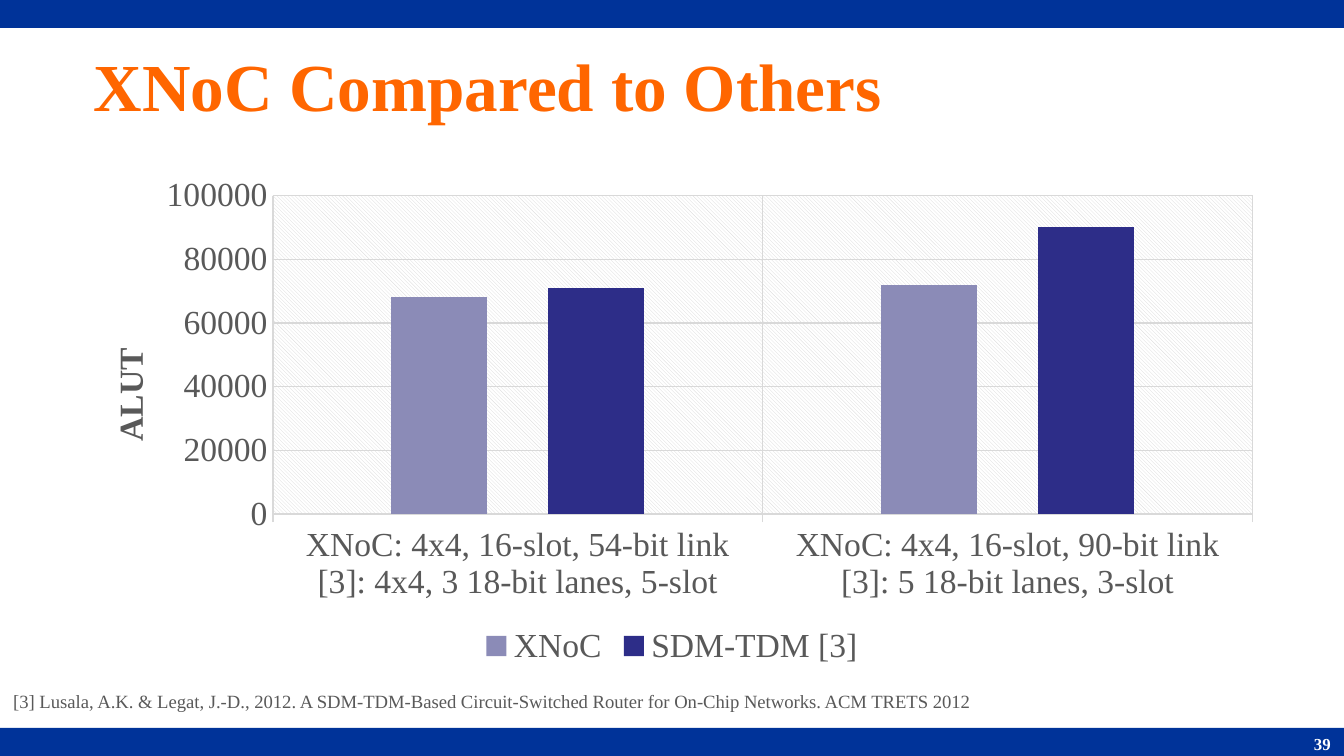
"""Build the slide that compares the ALUT use of XNoC and SDM-TDM."""
from lxml.etree import SubElement
from pptx import Presentation
from pptx.chart.data import CategoryChartData
from pptx.dml.color import RGBColor
from pptx.enum.chart import XL_CHART_TYPE, XL_LEGEND_POSITION, XL_TICK_MARK
from pptx.enum.shapes import MSO_SHAPE
from pptx.enum.text import MSO_ANCHOR, PP_ALIGN
from pptx.oxml import parse_xml
from pptx.oxml.ns import nsdecls, qn
from pptx.util import Pt

WIDTH, HEIGHT, BAND = 720, 405, 15
FONT = "Times New Roman"
BLUE, ORANGE, WHITE, GRAY, GRID = "003399", "FF6600", "FFFFFF", "595959", "D9D9D9"

TEXTS = [
    ("XNoC Compared to Others", (43, 15, 514, 61), 36, ORANGE, True, PP_ALIGN.LEFT),
    ("39", (570, 391.5, 150, 14), 9, WHITE, True, PP_ALIGN.RIGHT),
    ("[3] Lusala, A.K. & Legat, J.-D., 2012. A SDM-TDM-Based Circuit-Switched Router "
     "for On-Chip Networks. ACM TRETS 2012", (0, 366, 720, 19), 10, GRAY, False, PP_ALIGN.LEFT),
]
CATEGORIES = [
    "XNoC: 4x4, 16-slot, 54-bit link\n[3]: 4x4, 3 18-bit lanes, 5-slot",
    "XNoC: 4x4, 16-slot, 90-bit link\n[3]: 5 18-bit lanes, 3-slot",
]
SERIES = [
    ("XNoC", (68000, 72000), "8B8BB7"),
    ("SDM-TDM [3]", (71000, 90000), "2D2D88"),
]
CHART_BOX = (36, 88.5, 648, 271)
PLOT_LAYOUT = {"layoutTarget": "inner", "xMode": "edge", "yMode": "edge",
               "x": 0.17, "y": 0.06, "w": 0.81, "h": 0.63}
TITLE_LAYOUT = {"xMode": "edge", "yMode": "edge", "x": 0.03, "y": 0.35}


def color(value):
    return RGBColor.from_string(value)


def points(box):
    return [Pt(length) for length in box]


def style_font(font, size, value, bold=False):
    font.name, font.size, font.bold = FONT, Pt(size), bold
    font.color.rgb = color(value)


def style_line(line):
    line.color.rgb = color(GRID)
    line.width = Pt(0.75)


def add_band(slide, top):
    band = slide.shapes.add_shape(MSO_SHAPE.RECTANGLE, *points((0, top, WIDTH, BAND)))
    band.shadow.inherit = False
    band.fill.solid()
    band.fill.fore_color.rgb = color(BLUE)
    band.line.fill.background()


def add_text(slide, text, box, size, value, bold, alignment):
    frame = slide.shapes.add_textbox(*points(box)).text_frame
    frame.word_wrap = True
    frame.vertical_anchor = MSO_ANCHOR.MIDDLE
    paragraph = frame.paragraphs[0]
    paragraph.alignment = alignment
    run = paragraph.add_run()
    run.text = text
    style_font(run.font, size, value, bold)


def set_layout(element, settings, position):
    layout = element.find(qn("c:layout"))
    if layout is not None:
        element.remove(layout)
    layout = parse_xml(f"<c:layout {nsdecls('c')}/>")
    manual = SubElement(layout, qn("c:manualLayout"))
    for name, value in settings.items():
        SubElement(manual, qn(f"c:{name}")).set("val", str(value))
    element.insert(position, layout)


def add_axis_title(axis, text):
    title = axis.axis_title
    run = title.text_frame.paragraphs[0].add_run()
    run.text = text
    style_font(run.font, 18, GRAY, True)
    body = title._element.find(".//" + qn("a:bodyPr"))
    body.set("rot", "-5400000")
    body.set("vert", "horz")
    set_layout(title._element, TITLE_LAYOUT, 1)


def fill_plot_area(plot_area):
    plot_area.append(parse_xml(
        f'<c:spPr {nsdecls("c", "a")}><a:pattFill prst="ltDnDiag">'
        f'<a:fgClr><a:srgbClr val="{GRID}"/></a:fgClr>'
        f'<a:bgClr><a:srgbClr val="{WHITE}"/></a:bgClr>'
        "</a:pattFill><a:ln><a:noFill/></a:ln></c:spPr>"))


def add_comparison_chart(slide):
    data = CategoryChartData(number_format="General")
    data.categories = CATEGORIES
    for name, values, _ in SERIES:
        data.add_series(name, values)
    chart = slide.shapes.add_chart(
        XL_CHART_TYPE.COLUMN_CLUSTERED, *points(CHART_BOX), data).chart
    chart.has_title = False
    style_font(chart.font, 18, GRAY)
    chart.has_legend = True
    chart.legend.position = XL_LEGEND_POSITION.BOTTOM
    chart.legend.include_in_layout = False
    style_font(chart.legend.font, 18, GRAY)

    plot = chart.plots[0]
    plot.vary_by_categories = False
    plot.gap_width, plot.overlap = 247, -64
    for series, (_, _, value) in zip(plot.series, SERIES):
        series.format.fill.solid()
        series.format.fill.fore_color.rgb = color(value)

    for axis in (chart.category_axis, chart.value_axis):
        axis.has_major_gridlines = True
        style_line(axis.major_gridlines.format.line)
        style_font(axis.tick_labels.font, 18, GRAY)
    chart.category_axis.major_tick_mark = XL_TICK_MARK.OUTSIDE
    style_line(chart.category_axis.format.line)
    value_axis = chart.value_axis
    value_axis.major_tick_mark = XL_TICK_MARK.NONE
    value_axis.format.line.fill.background()
    value_axis.minimum_scale, value_axis.maximum_scale = 0, 100000
    value_axis.major_unit = 20000
    add_axis_title(value_axis, "ALUT")

    plot_area = chart._chartSpace.find(".//" + qn("c:plotArea"))
    set_layout(plot_area, PLOT_LAYOUT, 0)
    fill_plot_area(plot_area)


def main():
    presentation = Presentation()
    presentation.slide_width, presentation.slide_height = Pt(WIDTH), Pt(HEIGHT)
    slide = presentation.slides.add_slide(presentation.slide_layouts[6])
    for top in (HEIGHT - BAND, 0):
        add_band(slide, top)
    add_comparison_chart(slide)
    for text in TEXTS:
        add_text(slide, *text)
    presentation.save("out.pptx")


if __name__ == "__main__":
    main()
